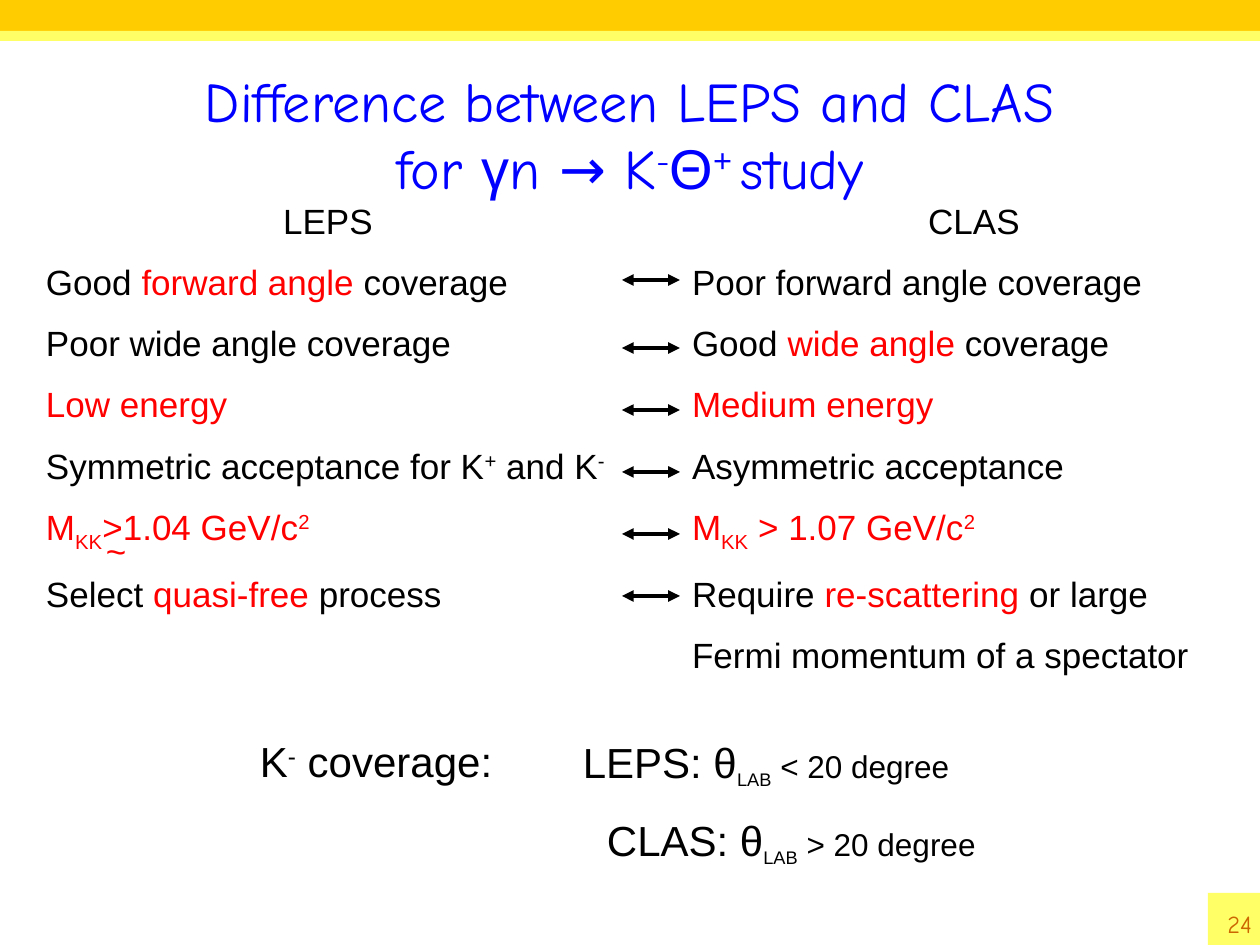
import dataclasses
import typing

import pptx
import pptx.dml.color
import pptx.enum.shapes
import pptx.enum.text
import pptx.oxml.ns
import pptx.util
from lxml import etree

RGB = pptx.dml.color.RGBColor
GOLD = RGB(0xFF, 0xCC, 0x00)
YELLOW = RGB(0xFF, 0xFF, 0x66)
BLACK = RGB(0x00, 0x00, 0x00)
RED = RGB(0xFF, 0x00, 0x00)
BLUE = RGB(0x00, 0x00, 0xFF)
ORANGE = RGB(0xCC, 0x66, 0x00)

LEFT = pptx.enum.text.PP_ALIGN.LEFT
CENTER = pptx.enum.text.PP_ALIGN.CENTER
RIGHT = pptx.enum.text.PP_ALIGN.RIGHT
SUPER, SUB = 30, -25
BODY_FONT, TITLE_FONT = "Arial", "Comic Neue"
PAGE_WIDTH, PAGE_HEIGHT = 1260, 945


def px(length):
    return pptx.util.Emu(round(length * 914400 / 126))


@dataclasses.dataclass
class Span:
    text: str
    color: typing.Optional[RGB] = None
    shift: int = 0
    size: typing.Optional[int] = None
    font: typing.Optional[str] = None


@dataclasses.dataclass
class Line:
    spans: list
    align: typing.Any = LEFT
    indent: int = 0


class Page:
    def __init__(self, slide):
        self.shapes = slide.shapes

    def bar(self, left, top, width, height, color):
        box = self.shapes.add_shape(
            pptx.enum.shapes.MSO_SHAPE.RECTANGLE, px(left), px(top), px(width), px(height))
        box.shadow.inherit = False
        box.fill.solid()
        box.fill.fore_color.rgb = color
        box.line.fill.background()

    def text(self, left, top, width, height, lines, size=20, color=BLACK,
             font=BODY_FONT, gap=0):
        box = self.shapes.add_textbox(px(left), px(top), px(width), px(height))
        frame = box.text_frame
        frame.word_wrap = True
        frame.margin_left = frame.margin_right = px(12)
        frame.margin_top = frame.margin_bottom = px(6)
        for index, line in enumerate(lines):
            para = frame.add_paragraph() if index else frame.paragraphs[0]
            para.alignment = line.align
            para.space_before = pptx.util.Pt(gap if index else 0)
            if line.indent:
                para._p.get_or_add_pPr().set("marL", str(px(line.indent)))
            for span in line.spans:
                run = para.add_run()
                run.text = span.text
                run.font.name = span.font or font
                run.font.size = pptx.util.Pt(span.size or size)
                run.font.color.rgb = span.color or color
                if span.shift:
                    run._r.get_or_add_rPr().set("baseline", str(span.shift * 1000))

    def double_arrow(self, left, right, y):
        arrow = self.shapes.add_connector(
            pptx.enum.shapes.MSO_CONNECTOR.STRAIGHT, px(left), px(y), px(right), px(y))
        arrow.line.color.rgb = BLACK
        arrow.line.width = pptx.util.Pt(2.25)
        outline = arrow.line._get_or_add_ln()
        for end in ("a:headEnd", "a:tailEnd"):
            etree.SubElement(outline, pptx.oxml.ns.qn(end), type="triangle")
        etree.SubElement(arrow._element.spPr, pptx.oxml.ns.qn("a:effectLst"))


def mass_limit(limit):
    return Line([Span("M", RED), Span("KK", RED, SUB), Span(limit, RED), Span("2", RED, SUPER)])


def angle_limit(experiment, limit, indent):
    return Line([Span(f"{experiment}: θ"), Span("LAB", shift=SUB, size=18),
                 Span(f" {limit} 20 degree", size=18)], indent=indent)


def main():
    deck = pptx.Presentation()
    deck.slide_width, deck.slide_height = px(PAGE_WIDTH), px(PAGE_HEIGHT)
    page = Page(deck.slides.add_slide(deck.slide_layouts[6]))

    page.bar(1208, 893, 52, 52, YELLOW)
    page.bar(0, 0, PAGE_WIDTH, 31, GOLD)
    page.bar(0, 31, PAGE_WIDTH, 10, YELLOW)

    leps = [
        Line([Span("LEPS")], CENTER),
        Line([Span("Good "), Span("forward angle", RED), Span(" coverage")]),
        Line([Span("Poor wide angle coverage")]),
        Line([Span("Low energy", RED)]),
        Line([Span("Symmetric acceptance for K"), Span("+", shift=SUPER),
              Span(" and K"), Span("-", shift=SUPER)]),
        mass_limit(">1.04 GeV/c"),
        Line([Span("Select "), Span("quasi-free", RED), Span(" process")]),
    ]
    clas = [
        Line([Span("CLAS")], CENTER),
        Line([Span("Poor forward angle coverage")]),
        Line([Span("Good "), Span("wide angle", RED), Span(" coverage")]),
        Line([Span("Medium energy", RED)]),
        Line([Span("Asymmetric acceptance")]),
        mass_limit(" > 1.07 GeV/c"),
        Line([Span("Require "), Span("re-scattering ", RED), Span("or large")]),
        Line([Span("Fermi momentum of a spectator")]),
    ]
    page.text(34, 193, 588, 495, leps, gap=11)
    page.text(680, 193, 588, 558, clas, gap=11)

    page.double_arrow(622, 680, 280)
    for row in range(5):
        page.double_arrow(622, 680, 348 + 62 * row)
    page.text(73, 523, 86, 54, [Line([Span("~", RED)], CENTER)])

    title = [
        Line([Span("Difference between LEPS and CLAS")], CENTER),
        Line([Span("for "), Span("γ", font=BODY_FONT), Span("n → K"),
              Span("-", shift=SUPER), Span("Θ", font=BODY_FONT),
              Span("+ ", shift=SUPER, font=BODY_FONT), Span("study")], CENTER),
    ]
    page.text(94, 60, 1072, 158, title, size=32, color=BLUE, font=TITLE_FONT)

    coverage = [angle_limit("LEPS", "<", 417), angle_limit("CLAS", ">", 441)]
    page.text(154, 731, 845, 140, coverage, size=24, gap=14)
    page.text(165, 730, 422, 64,
              [Line([Span("K"), Span("-", shift=SUPER), Span(" coverage:")], CENTER)], size=24)
    page.text(998, 903, 266, 42, [Line([Span("24")], RIGHT)],
              size=14, color=ORANGE, font=TITLE_FONT)

    deck.save("out.pptx")


if __name__ == "__main__":
    main()
